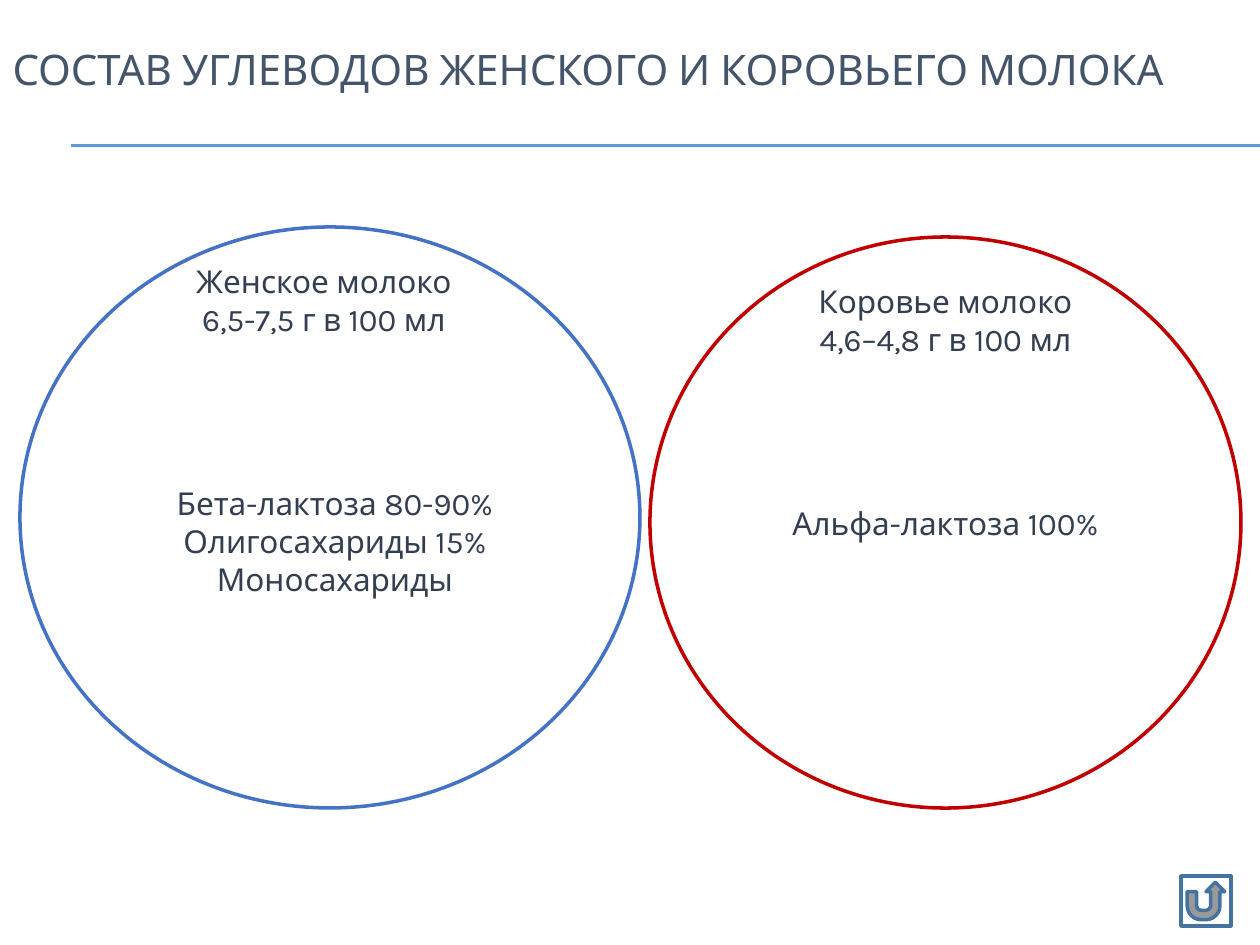
from lxml import etree
from pptx import Presentation
from pptx import util as u
from pptx.dml.color import RGBColor
from pptx.enum import shapes, text
from pptx.oxml.ns import qn

PX = 914400 / 126
FONT = "Karla"
WHITE = RGBColor(0xFF, 0xFF, 0xFF)
TITLE_SLATE = RGBColor(0x44, 0x54, 0x6A)
TEXT_SLATE = RGBColor(0x33, 0x3F, 0x50)
RULE_BLUE = RGBColor(0x5B, 0x9B, 0xD5)
CIRCLE_BLUE = RGBColor(0x44, 0x72, 0xC4)
CIRCLE_RED = RGBColor(0xC0, 0x00, 0x00)
BUTTON_BLUE = RGBColor(0x43, 0x73, 0x9E)


def emu(*lengths):
    return [u.Emu(round(length * PX)) for length in lengths]


def write(frame, lines, size, color, align, anchor):
    frame.text = "\n".join(lines)
    frame.word_wrap = True
    frame.vertical_anchor = anchor
    for para in frame.paragraphs:
        para.alignment = align
        for span in para.runs:
            span.font.name = FONT
            span.font.size = u.Pt(size)
            span.font.color.rgb = color


def write_centred(frame, lines, anchor=text.MSO_ANCHOR.MIDDLE):
    write(frame, lines, 18, TEXT_SLATE, text.PP_ALIGN.CENTER, anchor)


def add_outlined(page, kind, box, color):
    shape = page.shapes.add_shape(kind, *emu(*box))
    shape.shadow.inherit = False
    shape.fill.solid()
    shape.fill.fore_color.rgb = WHITE
    shape.line.color.rgb = color
    shape.line.width = u.Pt(2)
    return shape


def add_rule(page, left, right, y):
    line = page.shapes.add_connector(
        shapes.MSO_CONNECTOR.STRAIGHT, *emu(left, y, right, y))
    line.line.color.rgb = RULE_BLUE
    line.line.width = u.Pt(0.75)
    etree.SubElement(line._element.spPr, qn("a:effectLst"))


def add_title(page, box, wording):
    title = page.shapes.title
    title.left, title.top, title.width, title.height = emu(*box)
    write(title.text_frame, [wording], 24, TITLE_SLATE,
          text.PP_ALIGN.LEFT, text.MSO_ANCHOR.MIDDLE)


def add_milk(page, box, color, heading_box, heading, sugars, sugars_box=None):
    """Circle with a heading; the sugars go in the circle or in their own box.

    The inner boxes are placed relative to the circle.
    """
    left, top = box[:2]

    def add_inner(inner):
        x, y, width, height = inner
        return page.shapes.add_textbox(*emu(left + x, top + y, width, height))

    circle = add_outlined(page, shapes.MSO_SHAPE.OVAL, box, color)
    holder = add_inner(sugars_box) if sugars_box else circle
    write_centred(holder.text_frame, sugars)

    label = add_inner(heading_box)
    write_centred(label.text_frame, heading, text.MSO_ANCHOR.TOP)
    label.text_frame.auto_size = text.MSO_AUTO_SIZE.SHAPE_TO_FIT_TEXT


def main():
    deck = Presentation()
    deck.slide_width, deck.slide_height = emu(1260, 945)
    page = deck.slides.add_slide(deck.slide_layouts[5])

    for y in (145, 146):
        add_rule(page, 71, 1260, y)
    add_title(page, (0, 20, 1260, 98),
              "СОСТАВ УГЛЕВОДОВ ЖЕНСКОГО И КОРОВЬЕГО МОЛОКА")
    add_milk(page, (650, 237, 591, 571), CIRCLE_RED, (138, 39, 315, 89),
             ["Коровье молоко", "4,6–4,8 г в 100 мл"],
             ["Альфа-лактоза 100%"])
    add_milk(page, (20, 227, 620, 581), CIRCLE_BLUE, (127, 29, 354, 89),
             ["Женское молоко", "6,5-7,5 г в 100 мл"],
             ["Бета-лактоза 80-90%", "Олигосахариды 15%", "Моносахариды"],
             (49, 137, 532, 354))
    add_outlined(page, shapes.MSO_SHAPE.ACTION_BUTTON_RETURN,
                 (1181, 876, 50, 50), BUTTON_BLUE)
    deck.save("out.pptx")


if __name__ == "__main__":
    main()
